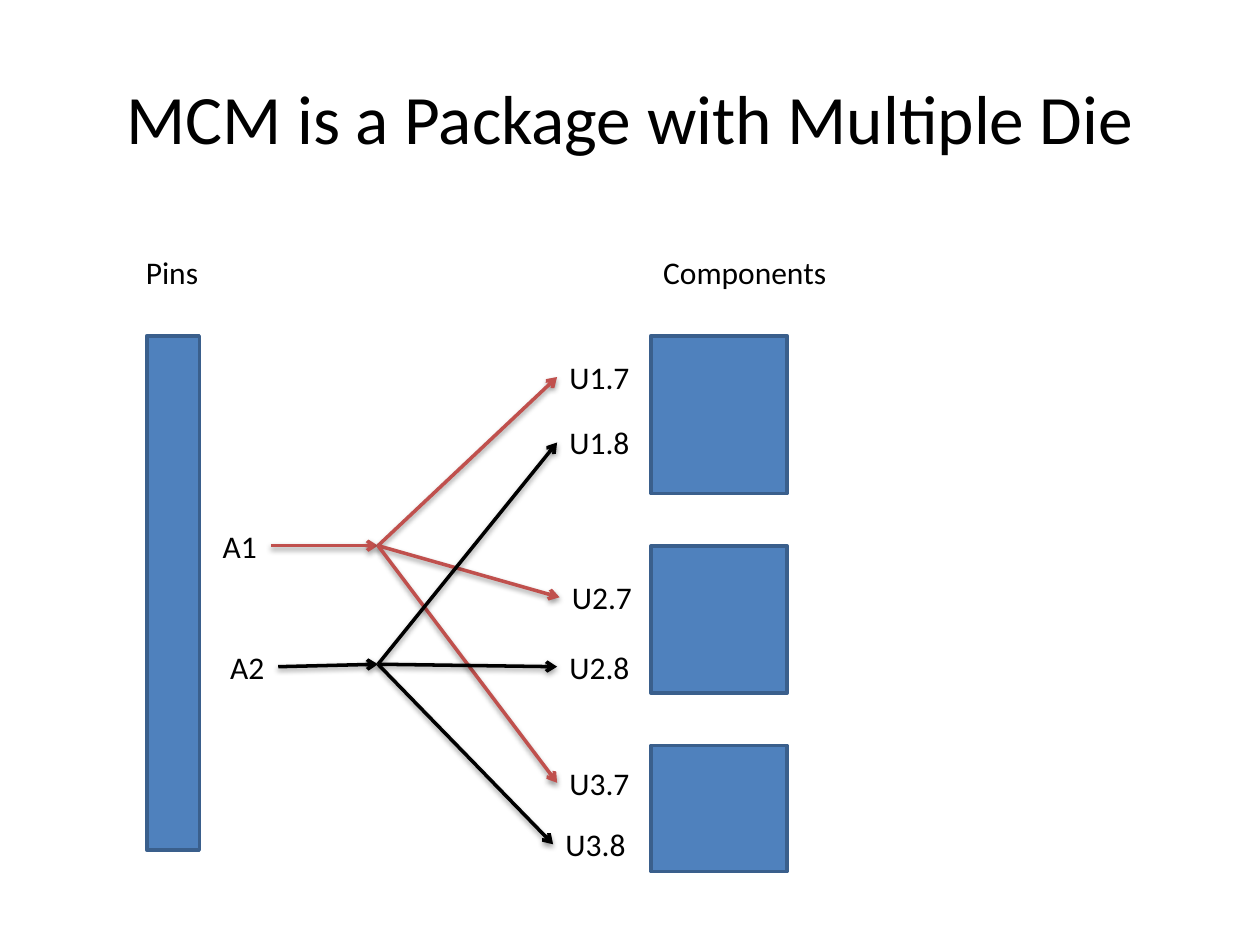
from lxml import etree
from pptx import Presentation
from pptx.dml.color import RGBColor
from pptx.enum import shapes, text
from pptx.oxml import ns
from pptx.util import Cm, Pt

COLORS = {"text": "000000", "block": "4F81BD", "edge": "3A5F8C",
          "A1": "C0504D", "A2": "000000"}
FONT = "Calibri"
LABEL_H = 1.02
HUB_X = 7.62
PIN_W, DIE_PIN_W = 1.22, 1.73

HEADINGS = [("Pins", 2.69, 1.57), ("Components", 13.12, 4.24)]
DIES = [(6.77, 3.18), (11.01, 2.96), (15.03, 2.54)]
NETS = {
    "A1": {"pin": (4.24, 10.49), "hub_y": 11.0,
           "ends": [("U1.7", 11.23, 7.09), ("U2.7", 11.28, 11.53),
                    ("U3.7", 11.23, 15.27)]},
    "A2": {"pin": (4.39, 12.93), "hub_y": 13.39,
           "ends": [("U1.8", 11.23, 8.41), ("U2.8", 11.23, 12.93),
                    ("U3.8", 11.15, 16.51)]},
}


def rgb(name):
    return RGBColor.from_string(COLORS[name])


def style_text(p, size):
    p.font.name = FONT
    p.font.size = Pt(size)
    p.font.color.rgb = rgb("text")


def set_title(s, content):
    sp = s.shapes.title
    sp.left, sp.top, sp.width, sp.height = Cm(1.27), Cm(0.76), Cm(22.86), Cm(3.18)
    tf = sp.text_frame
    tf.text = content
    tf.vertical_anchor = text.MSO_ANCHOR.MIDDLE
    p = tf.paragraphs[0]
    p.alignment = text.PP_ALIGN.CENTER
    style_text(p, 39.6)


def add_block(s, x, y, w, h):
    sp = s.shapes.add_shape(shapes.MSO_SHAPE.RECTANGLE, Cm(x), Cm(y), Cm(w), Cm(h))
    sp.shadow.inherit = False
    sp.fill.solid()
    sp.fill.fore_color.rgb = rgb("block")
    sp.line.color.rgb = rgb("edge")
    sp.line.width = Pt(2)


def add_label(s, content, x, y, w):
    tf = s.shapes.add_textbox(Cm(x), Cm(y), Cm(w), Cm(LABEL_H)).text_frame
    tf.word_wrap = False
    tf.auto_size = text.MSO_AUTO_SIZE.SHAPE_TO_FIT_TEXT
    tf.text = content
    style_text(tf.paragraphs[0], 18)


def add_arrow(s, start, end, color):
    line = s.shapes.add_connector(shapes.MSO_CONNECTOR.STRAIGHT,
                                  *map(Cm, start + end)).line
    line.color.rgb = rgb(color)
    line.width = Pt(2)
    etree.SubElement(line._get_or_add_ln(), ns.qn("a:tailEnd"), type="arrow")


def add_net(s, name, pin, hub_y, ends):
    x, y = pin
    hub = (HUB_X, hub_y)
    add_label(s, name, x, y, PIN_W)
    add_arrow(s, (x + PIN_W, y + LABEL_H / 2), hub, name)
    for die_pin, x, y in ends:
        add_label(s, die_pin, x, y, DIE_PIN_W)
        add_arrow(s, hub, (x, y + LABEL_H / 2), name)


def main():
    prs = Presentation()
    prs.slide_width, prs.slide_height = Cm(25.4), Cm(19.05)
    s = prs.slides.add_slide(prs.slide_layouts[5])
    set_title(s, "MCM is a Package with Multiple Die")
    add_block(s, 2.96, 6.77, 1.06, 10.37)
    for y, h in DIES:
        add_block(s, 13.12, y, 2.75, h)
    for content, x, w in HEADINGS:
        add_label(s, content, x, 4.98, w)
    for name, net in NETS.items():
        add_net(s, name, **net)
    prs.save("out.pptx")


if __name__ == "__main__":
    main()
